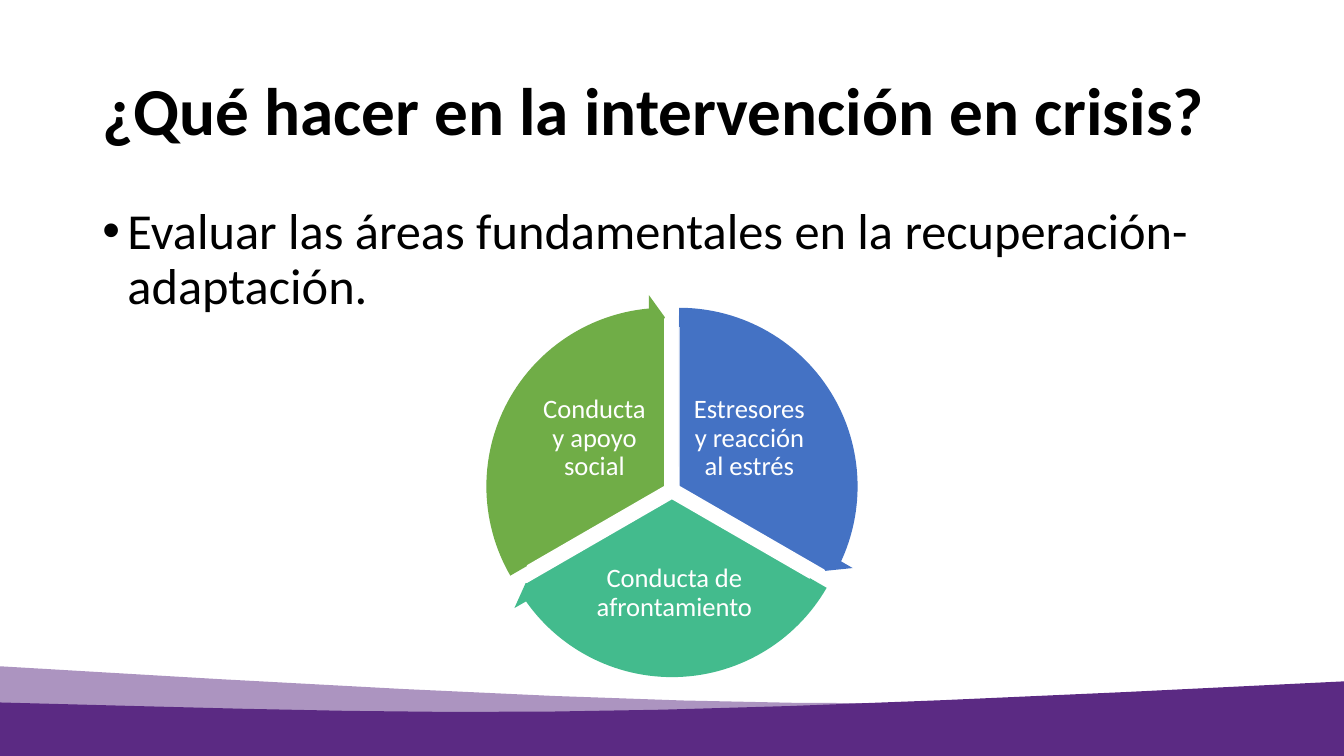
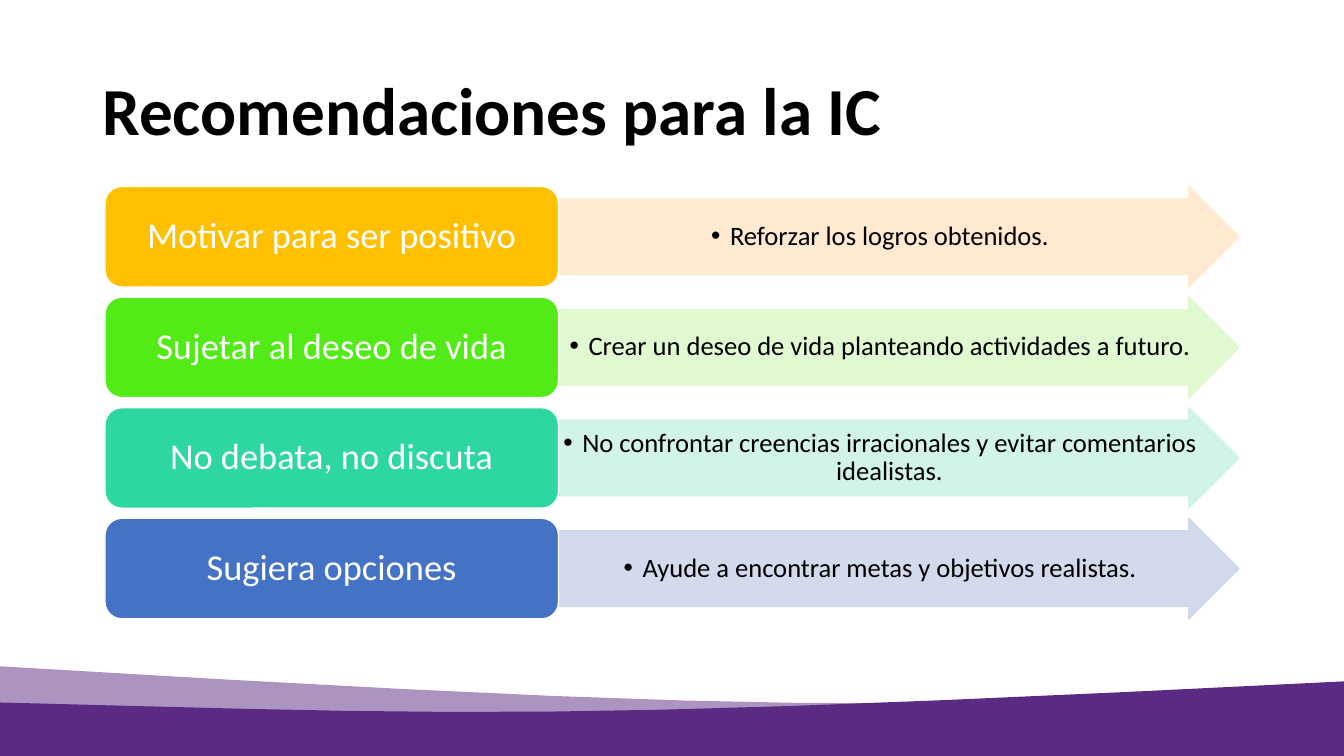
import dataclasses
import math

import lxml.etree
import pptx
import pptx.dml.color
import pptx.enum.shapes
import pptx.enum.text
import pptx.oxml.ns
import pptx.util

Pt = pptx.util.Pt
SHAPES = pptx.enum.shapes.MSO_SHAPE
ALIGN = pptx.enum.text.PP_ALIGN
ANCHOR = pptx.enum.text.MSO_ANCHOR


@dataclasses.dataclass(frozen=True)
class Theme:
    font: str = "Calibri"
    bullet_font: str = "Arial"
    ink: str = "000000"
    paper: str = "FFFFFF"
    purple: str = "5B2A83"
    blue: str = "4472C4"
    teal: str = "43BB8D"
    green: str = "70AD47"
    amber: str = "FFC000"
    lime: str = "53EB17"
    mint: str = "2ED7A1"
    pale_amber: str = "FFE8CC"
    pale_lime: str = "DDF9CC"
    pale_mint: str = "CDF2E7"
    pale_blue: str = "CFD6EA"
    title_size: int = 48
    body_size: int = 36
    heading_size: int = 26
    label_size: int = 19
    line_spacing: float = 0.9


THEME = Theme()
WIDTH, HEIGHT = 960, 540
WAVES = [
    ([(960, 494.6), (622.1, 504.7), (571.7, 510.5), (0, 475.9)], 50),
    ([(0, 501.8), (338.4, 510.5), (388.8, 515.5), (960, 486.7)], 100),
]
WAVE_STEPS = 10
WHEEL_CENTER = (480, 350.3)
WHEEL_GAP = 5.8
PIE_SIZE, RING_SIZE = 244, 274.3
RING_HEAD_ANGLE = 5.46
DEGREE = 0.6
ROW_TOP, ROW_PITCH, ROW_HEIGHT = 133.2, 79, 71.8
HEADING_LEFT, HEADING_WIDTH = 75, 324
ARROW_WIDTH = 486


def set_alpha(fill, percent):
    if percent < 100:
        color = fill._xPr.find(".//" + pptx.oxml.ns.qn("a:srgbClr"))
        alpha = lxml.etree.SubElement(color, pptx.oxml.ns.qn("a:alpha"))
        alpha.set("val", str(percent * 1000))


def paint(fill, color, alpha=100):
    fill.solid()
    fill.fore_color.rgb = pptx.dml.color.RGBColor.from_string(color)
    set_alpha(fill, alpha)


def style_shape(shape, color, outline=None, alpha=100):
    shape.shadow.inherit = False
    paint(shape.fill, color, alpha)
    if outline is None:
        shape.line.fill.background()
    else:
        shape.line.width = Pt(1)
        paint(shape.line.fill, outline, alpha)


def add_preset(slide, kind, box, color, outline=None, alpha=100, adjustments=()):
    shape = slide.shapes.add_shape(kind, *map(Pt, box))
    for index, value in enumerate(adjustments):
        shape.adjustments[index] = value
    style_shape(shape, color, outline, alpha)
    return shape


def add_bullet(paragraph, indent):
    properties = paragraph._p.get_or_add_pPr()
    properties.set("marL", str(Pt(indent)))
    properties.set("indent", str(-Pt(indent)))
    for tag, attribute, value in (("a:buFont", "typeface", THEME.bullet_font),
                                  ("a:buChar", "char", "•")):
        element = lxml.etree.SubElement(properties, pptx.oxml.ns.qn(tag))
        element.set(attribute, value)


def write(shape, text, size, color, bold=False, align=ALIGN.CENTER,
          anchor=ANCHOR.MIDDLE, insets=(7.2, 3.6, 7.2, 3.6), bullet_indent=0):
    frame = shape.text_frame
    frame.word_wrap = True
    frame.vertical_anchor = anchor
    (frame.margin_left, frame.margin_top,
     frame.margin_right, frame.margin_bottom) = map(Pt, insets)
    frame.text = text
    paragraph = frame.paragraphs[0]
    if bullet_indent:
        add_bullet(paragraph, bullet_indent)
    paragraph.alignment = align
    paragraph.line_spacing = THEME.line_spacing
    for run in paragraph.runs:
        run.font.name = THEME.font
        run.font.size = Pt(size)
        run.font.bold = bold
        run.font.color.rgb = pptx.dml.color.RGBColor.from_string(color)


def add_text(slide, box, text, size, color, **options):
    write(slide.shapes.add_textbox(*map(Pt, box)), text, size, color, **options)


def curve_point(controls, t):
    weights = ((1 - t) ** 3, 3 * t * (1 - t) ** 2, 3 * t ** 2 * (1 - t), t ** 3)
    return tuple(Pt(sum(w * point[axis] for w, point in zip(weights, controls)))
                 for axis in (0, 1))


def add_wave(slide, controls, alpha):
    edge = [curve_point(controls, step / WAVE_STEPS) for step in range(WAVE_STEPS + 1)]
    corners = [(Pt(controls[end][0]), Pt(HEIGHT)) for end in (-1, 0)]
    builder = slide.shapes.build_freeform(*edge[0])
    builder.add_line_segments(edge[1:] + corners, close=True)
    style_shape(builder.convert_to_shape(), THEME.purple, alpha=alpha)


def add_base_slide(deck, title):
    slide = deck.slides.add_slide(deck.slide_layouts[6])
    for controls, alpha in WAVES:
        add_wave(slide, controls, alpha)
    add_text(slide, (66, 28.8, 828, 104.4), title, THEME.title_size, THEME.ink,
             bold=True, align=ALIGN.LEFT)
    return slide


def centered_box(center, size):
    return center[0] - size / 2, center[1] - size / 2, size, size


def add_wheel(slide, sectors):
    span = 360 / len(sectors)
    rings = []
    for index, (label, color, label_box) in enumerate(sectors):
        start = (270 + index * span) % 360
        end = (start + span) % 360
        middle = math.radians(start + span / 2)
        center = (WHEEL_CENTER[0] + WHEEL_GAP * math.cos(middle),
                  WHEEL_CENTER[1] + WHEEL_GAP * math.sin(middle))
        add_preset(slide, SHAPES.PIE, centered_box(center, PIE_SIZE), color,
                   THEME.paper, adjustments=(start * DEGREE, end * DEGREE))
        add_text(slide, label_box, label, THEME.label_size, THEME.paper,
                 insets=(2, 2, 2, 2))
        rings.append((center, color, start, end))
    for center, color, start, end in rings:
        add_preset(slide, SHAPES.CIRCULAR_ARROW, centered_box(center, RING_SIZE), color,
                   adjustments=(0.05, RING_HEAD_ANGLE * DEGREE,
                                (end - RING_HEAD_ANGLE) * DEGREE, start * DEGREE, 0.06))


def add_recommendation(slide, top, heading, advice, color, pale):
    arrow_box = (HEADING_LEFT + HEADING_WIDTH, top, ARROW_WIDTH, ROW_HEIGHT)
    arrow = add_preset(slide, SHAPES.RIGHT_ARROW, arrow_box, pale, pale, 90, (0.75, 0.5))
    write(arrow, advice, THEME.label_size, THEME.ink,
          insets=(0.9, 0.9, 0.9, 0.9), bullet_indent=13.5)
    heading_box = (HEADING_LEFT, top, HEADING_WIDTH, ROW_HEIGHT)
    card = add_preset(slide, SHAPES.ROUNDED_RECTANGLE, heading_box, color, THEME.paper)
    write(card, heading, THEME.heading_size, THEME.paper)


def build_intervention(deck):
    slide = add_base_slide(deck, "¿Qué hacer en la intervención en crisis?")
    add_text(slide, (66, 143.7, 828, 342.7),
             "Evaluar las áreas fundamentales en la recuperación-adaptación.",
             THEME.body_size, THEME.ink, align=ALIGN.LEFT, anchor=ANCHOR.TOP,
             bullet_indent=18)
    add_wheel(slide, [
        ("Estresores y reacción al estrés", THEME.blue, (491.8, 276.8, 87, 72.7)),
        ("Conducta de afrontamiento", THEME.teal, (416.2, 392.1, 131, 64)),
        ("Conducta y apoyo social", THEME.green, (381.1, 276.8, 87, 72.7)),
    ])


def build_recommendations(deck):
    slide = add_base_slide(deck, "Recomendaciones para la IC")
    recommendations = [
        ("Motivar para ser positivo", "Reforzar los logros obtenidos.",
         THEME.amber, THEME.pale_amber),
        ("Sujetar al deseo de vida",
         "Crear un deseo de vida planteando actividades a futuro.",
         THEME.lime, THEME.pale_lime),
        ("No debata, no discuta",
         "No confrontar creencias irracionales y evitar comentarios idealistas.",
         THEME.mint, THEME.pale_mint),
        ("Sugiera opciones", "Ayude a encontrar metas y objetivos realistas.",
         THEME.blue, THEME.pale_blue),
    ]
    for row, recommendation in enumerate(recommendations):
        add_recommendation(slide, ROW_TOP + row * ROW_PITCH, *recommendation)


def main():
    deck = pptx.Presentation()
    deck.slide_width, deck.slide_height = Pt(WIDTH), Pt(HEIGHT)
    build_intervention(deck)
    build_recommendations(deck)
    deck.save("out.pptx")


if __name__ == "__main__":
    main()
